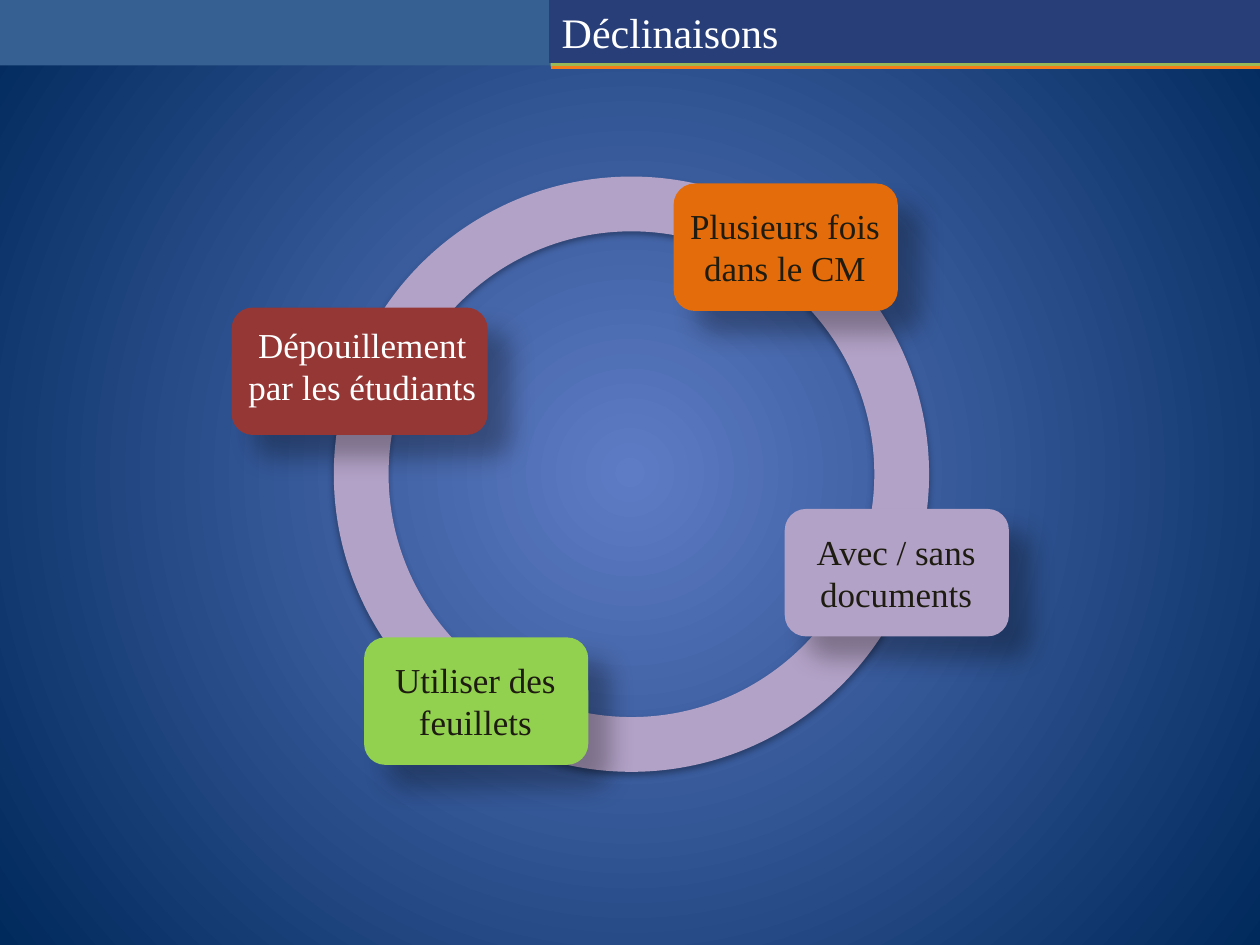
"""Builds the "Déclinaisons" slide: a ring with four labelled cards."""
import dataclasses

import pptx
import pptx.dml.color
import pptx.enum.shapes
import pptx.enum.text
import pptx.oxml
import pptx.oxml.ns
import pptx.util

Cm = pptx.util.Cm
Pt = pptx.util.Pt
KINDS = pptx.enum.shapes.MSO_SHAPE
ALIGN = pptx.enum.text.PP_ALIGN
NS = pptx.oxml.ns.nsdecls("a")


@dataclasses.dataclass(frozen=True)
class Theme:
    """Colours, font and type sizes of the slide."""
    glow: str = "5E7CC5"
    night: str = "00295C"
    bar: str = "376092"
    title: str = "283E79"
    green: str = "98B955"
    line: str = "F57D19"
    lilac: str = "B3A2C7"
    orange: str = "E46C0A"
    red: str = "953735"
    lime: str = "92D050"
    white: str = "FFFFFF"
    dark: str = "1E1C11"
    font: str = "Times New Roman"
    head: int = 24
    body: int = 20


THEME = Theme()


@dataclasses.dataclass(frozen=True)
class Card:
    """Place, colours and wording of one card, in centimetres."""
    text: str
    left: float
    top: float
    fill: str
    ink: str = THEME.dark
    width: float = 4.52
    inset: tuple = (-0.09, 0.3)
    grow: float = 0.15


CARDS = (
    Card("Plusieurs fois dans le CM", 13.58, 3.7, THEME.orange),
    Card("Avec / sans\ndocuments", 15.82, 10.26, THEME.lilac),
    Card("Dépouillement par les étudiants", 4.67, 6.2, THEME.red,
         THEME.white, 5.16, (-0.25, 0.2), 0.61),
    Card("Utiliser des feuillets", 7.34, 12.85, THEME.lime),
)
HIGH = 2.57


def rgb(code):
    """Return a colour object for a hex code."""
    return pptx.dml.color.RGBColor.from_string(code)


def apply(target, values):
    """Set each attribute named in values on target."""
    for name, value in values.items():
        setattr(target, name, value)


def box(*sizes):
    """Turn centimetre numbers into lengths."""
    return [Cm(size) for size in sizes]


def write(shape, text, size, ink, align):
    """Write one styled paragraph into a shape."""
    frame = shape.text_frame
    apply(frame, {"word_wrap": True,
                  "auto_size": pptx.enum.text.MSO_AUTO_SIZE.NONE})
    para = frame.paragraphs[0]
    apply(para, {"text": text, "alignment": align})
    for run in para.runs:
        apply(run.font, {"name": THEME.font, "size": Pt(size)})
        run.font.color.rgb = rgb(ink)


def paint(slide):
    """Fill the background with a round gradient."""
    fill = slide.background.fill
    fill.gradient()
    for stop, code in zip(fill.gradient_stops, (THEME.glow, THEME.night)):
        stop.color.rgb = rgb(code)
    ring = pptx.oxml.parse_xml(
        f'<a:path {NS} path="circle"><a:fillToRect l="50000" t="50000" '
        'r="50000" b="50000"/></a:path>')
    lin = slide.element.find(".//" + pptx.oxml.ns.qn("a:lin"))
    lin.getparent().replace(lin, ring)


def form(shapes, kind, place, fill):
    """Add a plain filled shape without outline or shadow."""
    shape = shapes.add_shape(kind, *box(*place))
    shape.shadow.inherit = False
    shape.fill.solid()
    shape.fill.fore_color.rgb = rgb(fill)
    shape.line.fill.background()
    return shape


def shade(shape, alpha, blur, dist, angle):
    """Give a shape a black outer shadow."""
    effects = shape.element.spPr.find(pptx.oxml.ns.qn("a:effectLst"))
    effects.append(pptx.oxml.parse_xml(
        f'<a:outerShdw {NS} blurRad="{Pt(blur)}" dist="{Pt(dist)}" '
        f'dir="{angle * 60000}" algn="ctr" rotWithShape="0">'
        f'<a:srgbClr val="000000"><a:alpha val="{alpha * 1000}"/>'
        '</a:srgbClr></a:outerShdw>'))


def header(slide):
    """Draw the top bars and set the title over them."""
    form(slide.shapes, KINDS.RECTANGLE, (0, 0, 25.4, 1.32), THEME.bar)
    form(slide.shapes, KINDS.RECTANGLE, (11.1, 1.19, 14.3, 0.15), THEME.green)
    rule = slide.shapes.add_connector(
        pptx.enum.shapes.MSO_CONNECTOR.STRAIGHT, *box(11.1, 1.36, 25.4, 1.36))
    rule.line.color.rgb = rgb(THEME.line)
    rule.line.width = Pt(1.5)
    rule.element.spPr.append(pptx.oxml.parse_xml(f"<a:effectLst {NS}/>"))
    title = slide.shapes.title
    place = box(11.07, 0, 14.33, 1.27)
    apply(title, dict(zip(("left", "top", "width", "height"), place)))
    title.fill.solid()
    title.fill.fore_color.rgb = rgb(THEME.title)
    write(title, "Déclinaisons", THEME.head, THEME.white, ALIGN.LEFT)
    rule.element.addnext(title.element)


def ring(slide):
    """Draw the ring that links the cards."""
    donut = form(slide.shapes, KINDS.DONUT, (6.73, 3.56, 12, 12), THEME.lilac)
    donut.adjustments[0] = 0.092
    shade(donut, 32, 3.5, 2.2, 90)


def label(slide, card):
    """Draw one card and its text as a group."""
    group = slide.shapes.add_group_shape().shapes
    place = (card.left, card.top, card.width, HIGH)
    tile = form(group, KINDS.ROUNDED_RECTANGLE, place, card.fill)
    shade(tile, 30, 15, 18, 45)
    right, down = card.inset
    text = group.add_textbox(*box(card.left + right, card.top + down,
                                  card.width + card.grow, 1.96))
    write(text, card.text, THEME.body, card.ink, ALIGN.CENTER)


def main():
    """Build and save the slide."""
    deck = pptx.Presentation()
    apply(deck, {"slide_width": Cm(25.4), "slide_height": Cm(19.05)})
    slide = deck.slides.add_slide(deck.slide_layouts[5])
    paint(slide)
    header(slide)
    ring(slide)
    for card in CARDS:
        label(slide, card)
    deck.save("out.pptx")


if __name__ == "__main__":
    main()
